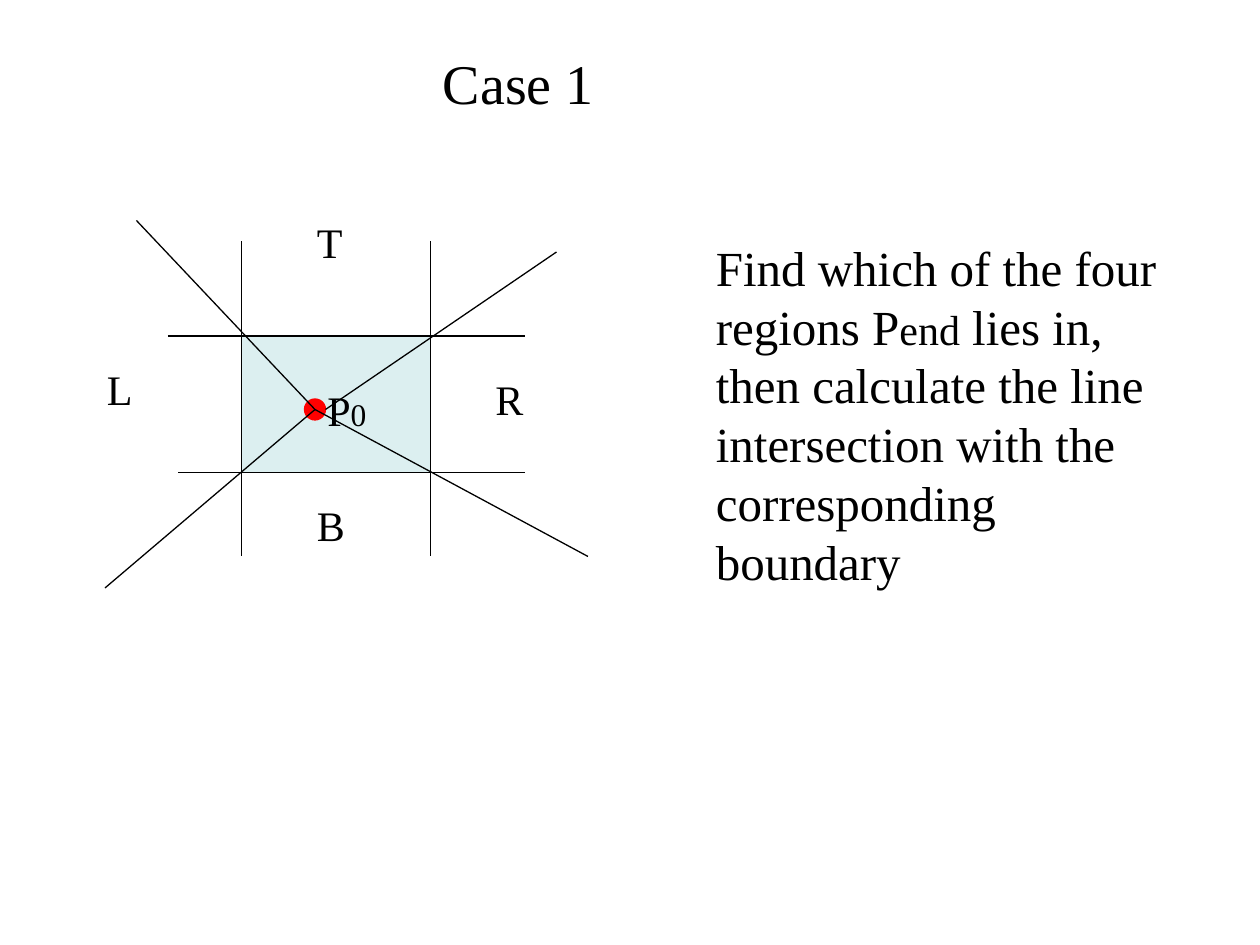
"""Build the slide on clipping case 1: a start point inside the window."""
from dataclasses import dataclass

from lxml import etree
from pptx import Presentation
from pptx.dml.color import RGBColor
from pptx.enum.shapes import MSO_CONNECTOR, MSO_SHAPE
from pptx.oxml.ns import qn
from pptx.util import Inches, Pt

STRAIGHT = MSO_CONNECTOR.STRAIGHT
RECTANGLE = MSO_SHAPE.RECTANGLE
OVAL = MSO_SHAPE.OVAL

COLUMNS, ROWS = 120, 90
SLIDE_WIDTH, SLIDE_HEIGHT = Inches(10), Inches(7.5)


@dataclass(frozen=True)
class Theme:
    """Colours, type sizes and line width of the slide."""
    font: str = "Times New Roman"
    ink: RGBColor = RGBColor(0x00, 0x00, 0x00)
    window: RGBColor = RGBColor(0xBB, 0xE0, 0xE3)
    point: RGBColor = RGBColor(0xFF, 0x00, 0x00)
    title: int = 32
    body: int = 28
    label: int = 24
    subscript: int = 18
    line: float = 0.75


THEME = Theme()


def x(column):
    """Return the horizontal position of a grid column."""
    return round(SLIDE_WIDTH * column / COLUMNS)


def y(row):
    """Return the vertical position of a grid row."""
    return round(SLIDE_HEIGHT * row / ROWS)


def add_text(slide, *parts, column, row, columns, rows, size):
    """Add wrapped text; a part is a string, or a string with its own size."""
    box = slide.shapes.add_textbox(x(column), y(row), x(columns), y(rows))
    box.text_frame.word_wrap = True
    paragraph = box.text_frame.paragraphs[0]
    for part in parts:
        wording, part_size = (part, size) if isinstance(part, str) else part
        run = paragraph.add_run()
        run.text = wording
        run.font.name = THEME.font
        run.font.size = Pt(part_size)
        run.font.color.rgb = THEME.ink


def add_line(slide, start, end):
    """Draw a thin straight line between two grid points."""
    line = slide.shapes.add_connector(
        STRAIGHT, x(start[0]), y(start[1]), x(end[0]), y(end[1]))
    line.line.color.rgb = THEME.ink
    line.line.width = Pt(THEME.line)
    etree.SubElement(line._element.spPr, qn("a:effectLst"))


def add_figure(slide, kind, column, row, columns, rows, fill, outline, opacity=100):
    """Add a filled and outlined preset shape."""
    figure = slide.shapes.add_shape(kind, x(column), y(row), x(columns), y(rows))
    figure.shadow.inherit = False
    figure.fill.solid()
    figure.fill.fore_color.rgb = fill
    figure.line.color.rgb = outline
    figure.line.width = Pt(THEME.line)
    if opacity < 100:
        color = figure._element.spPr.find(qn("a:solidFill"))[0]
        etree.SubElement(color, qn("a:alpha"), val=str(opacity * 1000))


def add_window(slide, left, top, right, bottom):
    """Draw the clip window and the extended lines of its four sides."""
    add_figure(slide, RECTANGLE, left, top, right - left, bottom - top,
               THEME.window, THEME.ink, opacity=50)
    for side in (left, right):
        add_line(slide, (side, 23), (side, 53))
    for side, start in ((top, 16), (bottom, 17)):
        add_line(slide, (start, side), (50, side))


def add_start_point(slide, column, row):
    """Draw the start point, its name and the rays through the corners."""
    add_text(slide, "P", ("0", THEME.subscript), column=column, row=row - 3,
             columns=17, rows=6, size=THEME.label)
    add_figure(slide, OVAL, column - 1, row - 1, 2, 2, THEME.point, THEME.point)
    center = (column, row)
    add_line(slide, center, (10, 56))
    add_line(slide, center, (56, 53))
    add_line(slide, (column + 1, row), (53, 24))
    add_line(slide, (13, 21), center)


def main():
    """Build and save the slide."""
    deck = Presentation()
    deck.slide_width, deck.slide_height = SLIDE_WIDTH, SLIDE_HEIGHT
    slide = deck.slides.add_slide(deck.slide_layouts[6])

    add_window(slide, left=23, top=32, right=41, bottom=45)
    add_text(slide, "Case 1", column=41, row=4, columns=58, rows=7.6,
             size=THEME.title)
    add_start_point(slide, column=30, row=39)
    for region, column, row in (("T", 29, 20), ("B", 29, 47),
                                ("R", 46, 35), ("L", 9, 34)):
        add_text(slide, region, column=column, row=row, columns=8, rows=6,
                 size=THEME.label)
    add_text(slide, "Find which of the four regions P", ("end", THEME.label),
             " lies in, then calculate the line intersection with the "
             "corresponding boundary",
             column=67, row=22, columns=45, rows=34.8, size=THEME.body)

    deck.save("out.pptx")


if __name__ == "__main__":
    main()
